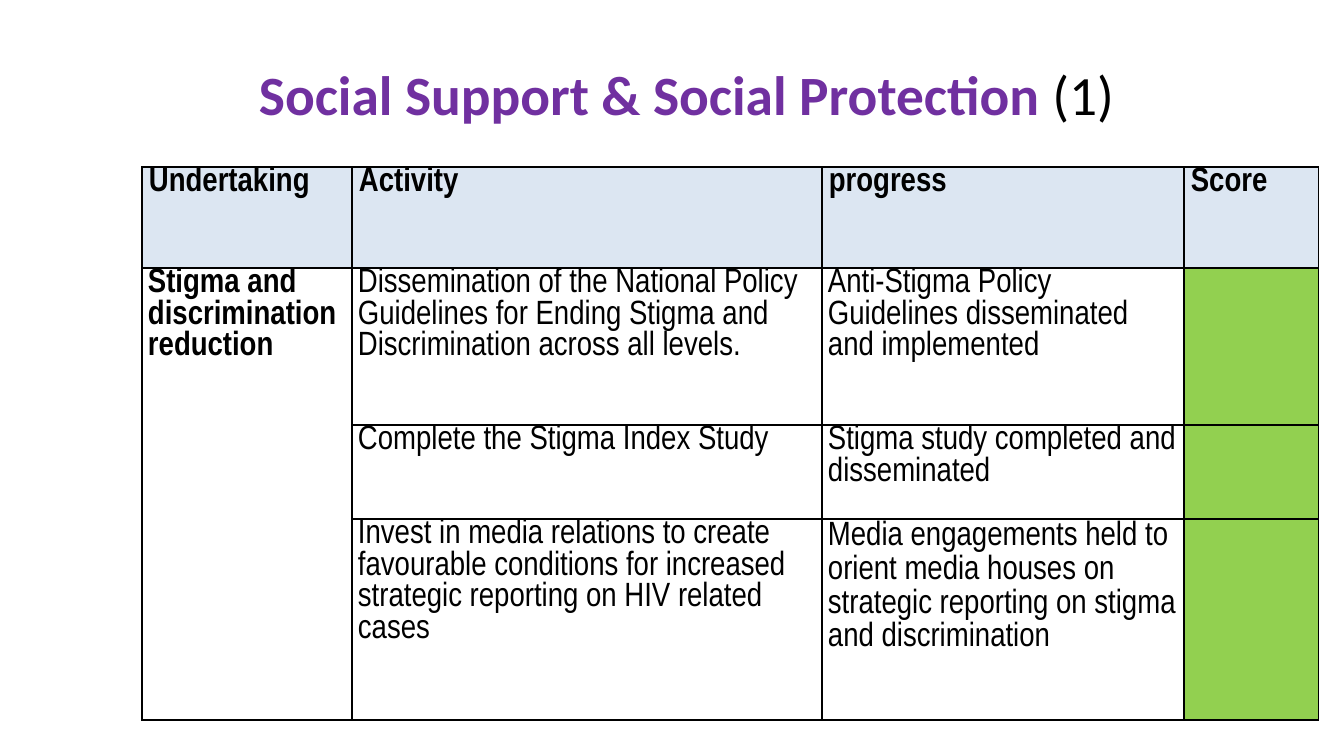
"""Build the social support and social protection progress slide."""
import pptx
import pptx.dml.color
import pptx.enum.text
import pptx.oxml
import pptx.oxml.ns
import pptx.util

SLIDE_SIZE = (1344, 756)
TITLE_BOX = (240, 30, 893, 126)
TITLE = [
    ("Social Support & Social Protection ", {"color": "7030A0", "bold": True}),
    ("(1)", {"color": "000000"}),
]
TABLE_CORNER = (142, 167)
COLUMN_WIDTHS = [210, 470, 362, 135]
ROW_HEIGHTS = [101, 157, 94, 201]
ROWS = [
    ("Undertaking", "Activity", "progress", "Score"),
    (
        "Stigma and discrimination reduction",
        "Dissemination of the National Policy Guidelines for Ending Stigma and "
        "Discrimination across all levels.",
        "Anti-Stigma Policy Guidelines disseminated and implemented",
        "",
    ),
    ("", "Complete the Stigma Index Study", "Stigma study completed and disseminated", ""),
    (
        "",
        "Invest in media relations to create favourable conditions for increased "
        "strategic reporting on HIV related cases",
        "Media engagements held to orient media houses on strategic reporting on "
        "stigma and discrimination",
        "",
    ),
]
SPACED_CELL = (3, 2)
HEADER_FILL = "DCE6F2"
SCORE_FILL = "92D050"
BORDER_COLOR = "000000"
BORDER_WIDTH = pptx.util.Pt(1)


def px(length):
    return pptx.util.Emu(round(length * 914400 / 100.8))


def rgb(color):
    return pptx.dml.color.RGBColor.from_string(color)


def add_text(paragraph, text, font="Arial Narrow", size=24, color="000000", bold=False):
    run = paragraph.add_run()
    run.text = text
    run.font.name = font
    run.font.size = pptx.util.Pt(size)
    run.font.bold = bold
    run.font.color.rgb = rgb(color)


def add_borders(cell):
    properties = cell._tc.get_or_add_tcPr()
    for side in ("lnL", "lnR", "lnT", "lnB"):
        properties.append(pptx.oxml.parse_xml(
            f'<a:{side} {pptx.oxml.ns.nsdecls("a")} w="{BORDER_WIDTH}">'
            f'<a:solidFill><a:srgbClr val="{BORDER_COLOR}"/></a:solidFill></a:{side}>'
        ))


def fill_cell(cell, color):
    if color:
        cell.fill.solid()
        cell.fill.fore_color.rgb = rgb(color)
    else:
        cell.fill.background()


def add_title(slide):
    frame = slide.shapes.add_textbox(*map(px, TITLE_BOX)).text_frame
    frame.word_wrap = True
    frame.vertical_anchor = pptx.enum.text.MSO_ANCHOR.MIDDLE
    paragraph = frame.paragraphs[0]
    paragraph.alignment = pptx.enum.text.PP_ALIGN.CENTER
    for text, style in TITLE:
        add_text(paragraph, text, font="Calibri", size=39.6, **style)


def add_progress_table(slide):
    size = (sum(COLUMN_WIDTHS), sum(ROW_HEIGHTS))
    table = slide.shapes.add_table(
        len(ROWS), len(COLUMN_WIDTHS), *map(px, TABLE_CORNER + size)
    ).table
    table.first_row = False
    table.horz_banding = False
    for column, width in zip(table.columns, COLUMN_WIDTHS):
        column.width = px(width)
    for row, height in zip(table.rows, ROW_HEIGHTS):
        row.height = px(height)
    score_column = len(COLUMN_WIDTHS) - 1
    for row_index, texts in enumerate(ROWS):
        is_header = row_index == 0
        for column_index, text in enumerate(texts):
            cell = table.cell(row_index, column_index)
            cell.margin_left = cell.margin_right = px(7 if is_header else 6)
            cell.margin_top = cell.margin_bottom = 0
            add_borders(cell)
            score_fill = SCORE_FILL if column_index == score_column else None
            fill_cell(cell, HEADER_FILL if is_header else score_fill)
            paragraph = cell.text_frame.paragraphs[0]
            if text:
                add_text(paragraph, text, bold=is_header or column_index == 0)
            if (row_index, column_index) == SPACED_CELL:
                paragraph.line_spacing = 1.07
                paragraph.space_after = pptx.util.Pt(8)
    table.cell(1, 0).merge(table.cell(len(ROWS) - 1, 0))


def main():
    presentation = pptx.Presentation()
    presentation.slide_width, presentation.slide_height = map(px, SLIDE_SIZE)
    slide = presentation.slides.add_slide(presentation.slide_layouts[6])
    add_title(slide)
    add_progress_table(slide)
    presentation.save("out.pptx")


if __name__ == "__main__":
    main()
